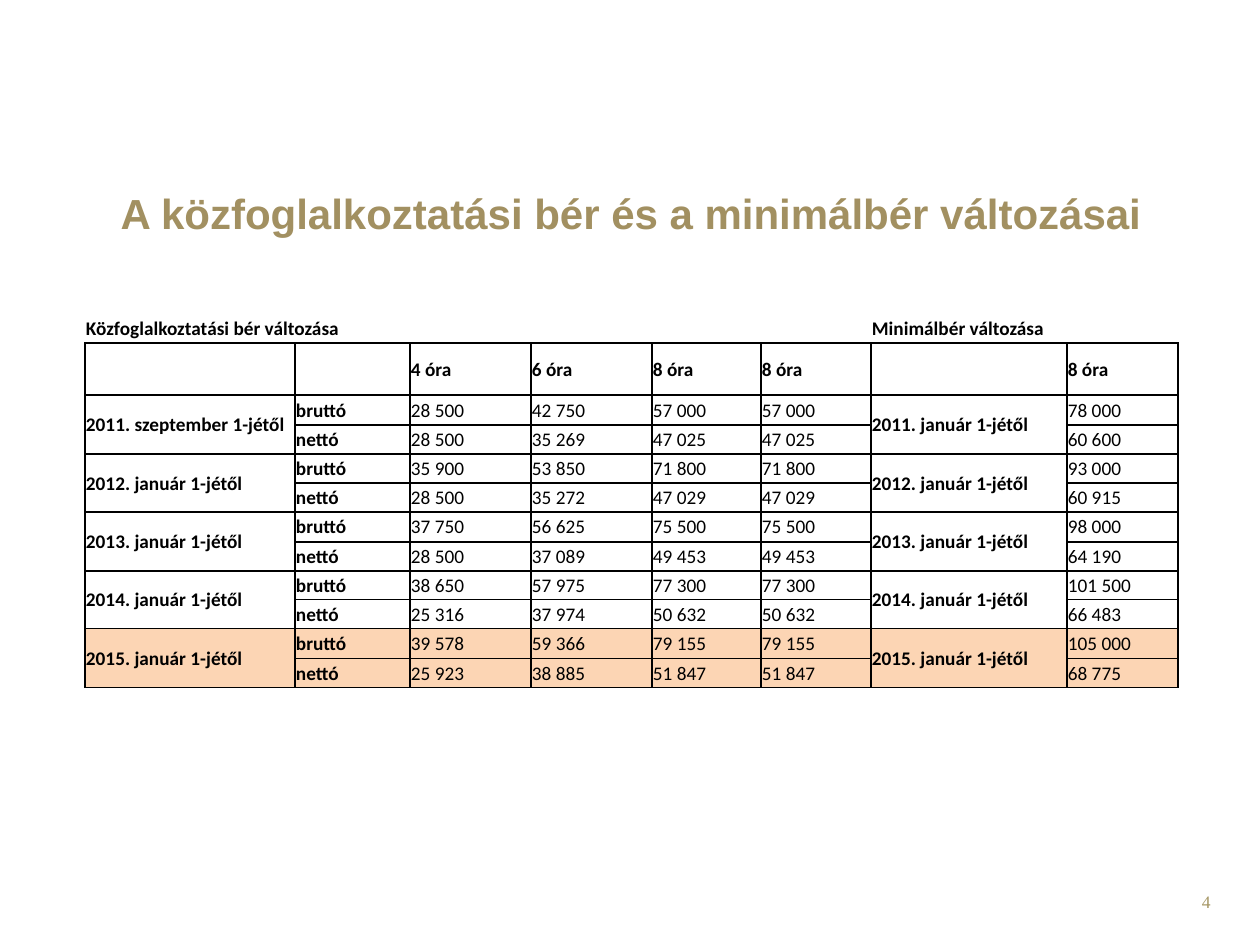
from lxml import etree
from pptx import Presentation
from pptx import util as u
from pptx.dml import color
from pptx.enum import text
from pptx.oxml import ns

PX = 914400 // 126
COLORS = {"gold": "A29061", "number": "A69765", "ink": "000000", "current": "FCD5B4"}

COLUMNS = [210, 115, 121, 121, 109, 110, 196, 111]
HOURS = ["", "", "4 óra", "6 óra", "8 óra", "8 óra", "", "8 óra"]
# start of public-work wage, start of minimum wage, then (4 h, 6 h, 8 h, minimum) gross and net
PERIODS = [
    ("2011. szeptember 1-jétől", "2011. január 1-jétől",
     ("28 500", "42 750", "57 000", "78 000"), ("28 500", "35 269", "47 025", "60 600")),
    ("2012. január 1-jétől", "2012. január 1-jétől",
     ("35 900", "53 850", "71 800", "93 000"), ("28 500", "35 272", "47 029", "60 915")),
    ("2013. január 1-jétől", "2013. január 1-jétől",
     ("37 750", "56 625", "75 500", "98 000"), ("28 500", "37 089", "49 453", "64 190")),
    ("2014. január 1-jétől", "2014. január 1-jétől",
     ("38 650", "57 975", "77 300", "101 500"), ("25 316", "37 974", "50 632", "66 483")),
    ("2015. január 1-jétől", "2015. január 1-jétől",
     ("39 578", "59 366", "79 155", "105 000"), ("25 923", "38 885", "51 847", "68 775")),
]


def px(length):
    return u.Emu(length * PX)


def wage_rows():
    rows = [["Közfoglalkoztatási bér változása", "", "", "", "", "",
             "Minimálbér változása", ""], HOURS]
    for start, minimum_start, gross, net in PERIODS:
        for kind, (four, six, eight, minimum) in (("bruttó", gross), ("nettó", net)):
            first = kind == "bruttó"
            rows.append([start if first else "", kind, four, six, eight, eight,
                         minimum_start if first else "", minimum])
    return rows


class SlideBuilder:
    """Holds the style and the current slide."""

    def __init__(self, deck):
        self.slide = deck.slides.add_slide(deck.slide_layouts[5])

    def add_span(self, para, words, color_name, **font):
        span = para.add_run()
        span.text = words
        for name, value in font.items():
            setattr(span.font, name, value)
        span.font.color.rgb = color.RGBColor.from_string(COLORS[color_name])

    def title(self, words, left, top, width, height):
        box = self.slide.shapes.title
        box.left, box.top, box.width, box.height = map(px, (left, top, width, height))
        frame = box.text_frame
        frame.vertical_anchor = text.MSO_ANCHOR.BOTTOM
        para = frame.paragraphs[0]
        para.alignment = text.PP_ALIGN.CENTER
        self.add_span(para, words, "gold", name="Arial", size=u.Pt(24), bold=True)

    def page_number(self, words, left, top, width, height):
        box = self.slide.shapes.add_textbox(*map(px, (left, top, width, height)))
        box.text_frame.word_wrap = True
        para = box.text_frame.paragraphs[0]
        para.alignment = text.PP_ALIGN.RIGHT
        self.add_span(para, words, "number", name="Times New Roman", size=u.Pt(10))

    def border(self, cell, sides):
        """Draw the listed sides of a cell and clear the others."""
        properties = cell._tc.get_or_add_tcPr()
        for index, side in enumerate("LRTB"):
            line = etree.Element(ns.qn("a:ln" + side), w=str(u.Pt(1)))
            if side in sides:
                fill = etree.SubElement(line, ns.qn("a:solidFill"))
                etree.SubElement(fill, ns.qn("a:srgbClr"), val=COLORS["ink"])
            else:
                etree.SubElement(line, ns.qn("a:noFill"))
            properties.insert(index, line)

    def cell(self, cell, words, bold, fill, sides):
        formats = {"margin_left": px(1), "margin_right": px(1), "margin_top": px(1),
                   "margin_bottom": 0, "vertical_anchor": text.MSO_ANCHOR.MIDDLE}
        for name, value in formats.items():
            setattr(cell, name, value)
        if fill:
            cell.fill.solid()
            cell.fill.fore_color.rgb = color.RGBColor.from_string(COLORS[fill])
        else:
            cell.fill.background()
        self.border(cell, sides)
        para = cell.text_frame.paragraphs[0]
        if words:
            self.add_span(para, words, "ink", name="Calibri", size=u.Pt(11), bold=bold)
        else:  # keeps an empty cell from stretching its row
            etree.SubElement(para._p, ns.qn("a:endParaRPr"), sz="1100")

    def wage_table(self, rows, left, top, columns, heights):
        frame = self.slide.shapes.add_table(
            len(rows), len(columns),
            *map(px, (left, top, sum(columns), sum(heights))))
        table = frame.table
        table.first_row = table.horz_banding = False
        for column, width in zip(table.columns, columns):
            column.width = px(width)
        for row, height in zip(table.rows, heights):
            row.height = px(height)
        for r, row in enumerate(rows):
            for c, words in enumerate(row):
                self.cell(table.cell(r, c), words,
                          bold=r < 2 or c in (0, 1, 6),
                          fill="current" if r >= len(rows) - 2 else None,
                          sides="LRTB" if r else "B")
        table.cell(0, 0).merge(table.cell(0, 1))
        for r in range(2, len(rows), 2):
            for c in (0, 6):
                table.cell(r, c).merge(table.cell(r + 1, c))


def main():
    deck = Presentation()
    deck.slide_width, deck.slide_height = u.Inches(10), u.Inches(7.5)
    page = SlideBuilder(deck)
    page.page_number("4", 929, 885, 294, 50)
    page.title("A közfoglalkoztatási bér és a minimálbér változásai", 64, 135, 1134, 109)
    rows = wage_rows()
    heights = [29, 52] + [30 if i % 4 == 0 else 29 for i in range(len(rows) - 2)]
    page.wage_table(rows, 85, 314, COLUMNS, heights)
    deck.save("out.pptx")


if __name__ == "__main__":
    main()
